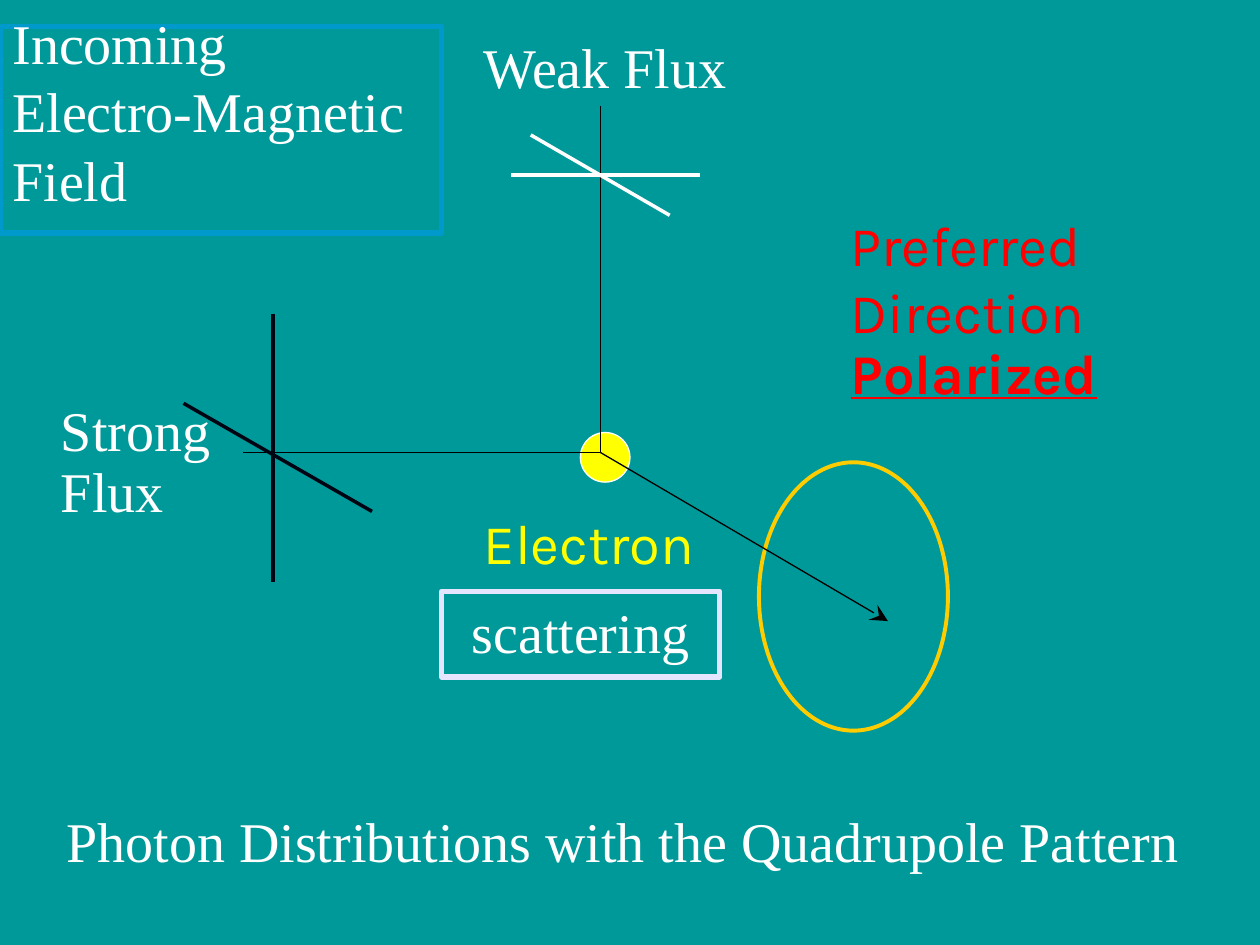
from pptx import Presentation
from pptx.util import Cm, Pt
from pptx.dml.color import RGBColor
from pptx.enum.shapes import MSO_SHAPE, MSO_CONNECTOR
from pptx.enum.text import PP_ALIGN, MSO_ANCHOR
from pptx.oxml.ns import qn
from lxml import etree

TEAL = RGBColor(0x00, 0x99, 0x99)
WHITE = RGBColor(0xFF, 0xFF, 0xFF)
BLACK = RGBColor(0x00, 0x00, 0x00)
INK = RGBColor(0x00, 0x05, 0x14)
RED = RGBColor(0xFF, 0x00, 0x00)
YELLOW = RGBColor(0xFF, 0xFF, 0x00)
GOLD = RGBColor(0xFF, 0xCC, 0x00)
BLUE = RGBColor(0x00, 0x99, 0xCC)
PALE = RGBColor(0xE5, 0xE5, 0xFF)
SERIF, SANS = "Times New Roman", "Karla"


def write(shape, lines, font, color, align=PP_ALIGN.LEFT):
    """Fill a shape with (text, line spacing, strong) paragraphs."""
    frame = shape.text_frame
    frame.word_wrap = True
    frame.vertical_anchor = MSO_ANCHOR.TOP
    for i, (text, space, strong) in enumerate(lines):
        para = frame.add_paragraph() if i else frame.paragraphs[0]
        para.alignment = align
        para.line_spacing = space
        para.space_before = Pt(16)
        run = para.add_run()
        run.text = text
        run.font.name = font
        run.font.size = Pt(32)
        run.font.color.rgb = color
        if strong:
            run.font.bold = run.font.underline = True


def draw(ends, color, width):
    """Add a straight line without shadow; ends are in cm."""
    line = shapes.add_connector(MSO_CONNECTOR.STRAIGHT, *map(Cm, ends))
    line.line.color.rgb = color
    line.line.width = Pt(width)
    etree.SubElement(line._element.spPr, qn("a:effectLst"))
    return line


deck = Presentation()
deck.slide_width, deck.slide_height = Cm(25.4), Cm(19.05)
slide = deck.slides.add_slide(deck.slide_layouts[6])
slide.background.fill.solid()
slide.background.fill.fore_color.rgb = TEAL
shapes = slide.shapes

# Electron, ring and framed boxes
for kind, box, fill, edge, width, lines, align in [
    (MSO_SHAPE.OVAL, (11.7, 8.72, 1, 1), YELLOW, WHITE, 0.75, [], None),
    (MSO_SHAPE.OVAL, (15.3, 9.32, 3.81, 5.41), None, GOLD, 2.25, [], None),
    (MSO_SHAPE.RECTANGLE, (0, 0.53, 8.9, 4.17), None, BLUE, 3,
     [("Incoming", 0.6, False), ("Electro-Magnetic", 0.6, False),
      ("Field", 0.6, False)], PP_ALIGN.LEFT),
    (MSO_SHAPE.RECTANGLE, (8.9, 11.92, 5.61, 1.73), None, PALE, 3,
     [("scattering", 1.0, False)], PP_ALIGN.CENTER),
]:
    form = shapes.add_shape(kind, *map(Cm, box))
    form.shadow.inherit = False
    if fill is None:
        form.fill.background()
    else:
        form.fill.solid()
        form.fill.fore_color.rgb = fill
    form.line.color.rgb = edge
    form.line.width = Pt(width)
    if lines:
        write(form, lines, SERIF, WHITE, align)

# Rays that meet at the electron
hub = (12.1, 9.12)
draw((4.9, 9.12, *hub), BLACK, 0.75)
draw((12.1, 2.13, *hub), BLACK, 0.75)
ray = draw((*hub, 17.9, 12.52), BLACK, 0.75)
etree.SubElement(ray.line._get_or_add_ln(), qn("a:tailEnd"),
                 type="stealth", w="lg", len="lg")

# Field crosses: strong at the left, weak at the top
for color, bars in [
    (INK, [(3.7, 8.13, 7.5, 10.31), (5.5, 6.32, 5.5, 11.73)]),
    (WHITE, [(10.7, 2.72, 13.5, 4.34), (10.31, 3.53, 14.11, 3.53)]),
]:
    shapes.add_group_shape([draw(bar, color, 2) for bar in bars])

# Labels
for box, lines, font, color in [
    ((0.98, 8.43, 4.32, 2.29),
     [("Strong", 0.5, False), ("Flux", 0.5, False)], SERIF, WHITE),
    ((9.5, 0.53, 5.79, 1.6), [("Weak Flux", 1.0, False)], SERIF, WHITE),
    ((9.5, 10.13, 5.41, 1.6), [("Electron", 1.0, False)], SANS, YELLOW),
    ((16.9, 4.12, 5.99, 4.19),
     [("Preferred Direction", 1.0, False), ("Polarized", 0.4, True)],
     SANS, RED),
    ((1.09, 16.13, 23.39, 1.6),
     [("Photon Distributions with the Quadrupole Pattern", 1.0, False)],
     SERIF, WHITE),
]:
    write(shapes.add_textbox(*map(Cm, box)), lines, font, color)

deck.save("out.pptx")
